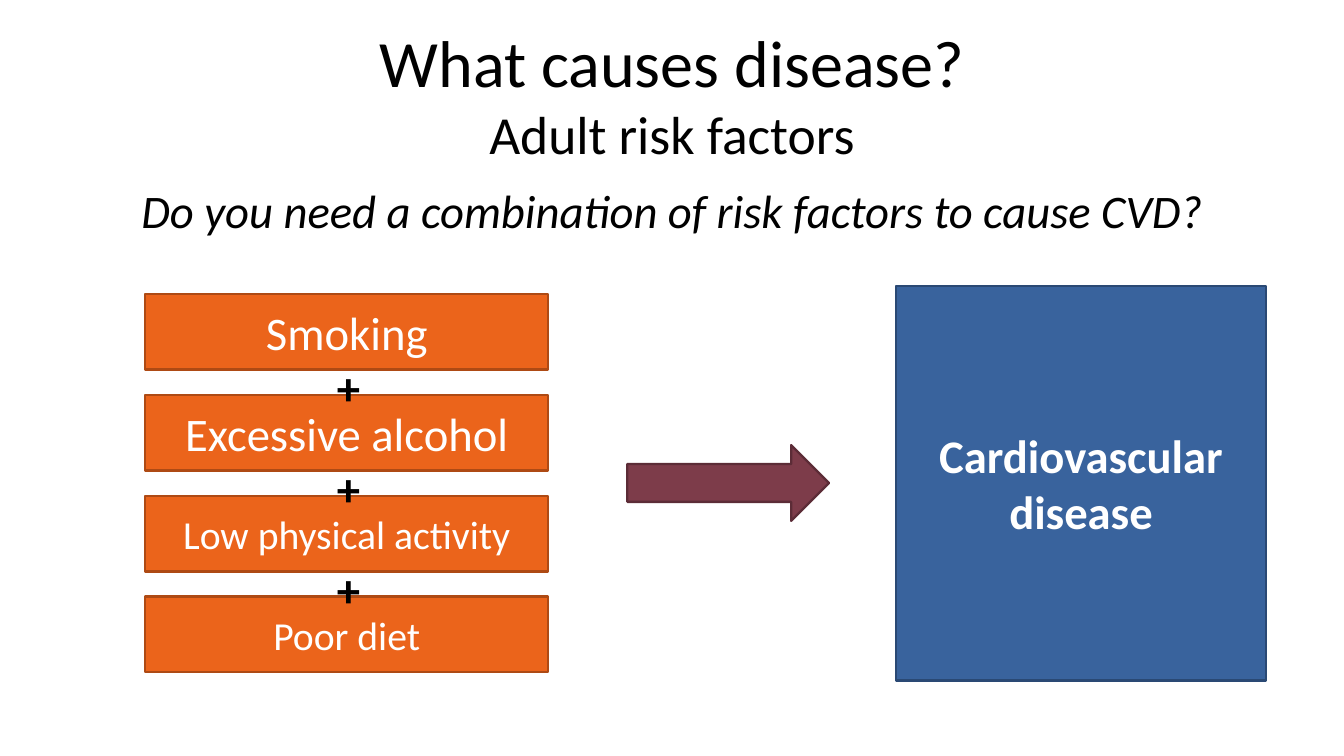
from pptx import Presentation
from pptx.dml.color import RGBColor
from pptx.enum import shapes, text
from pptx.util import Cm, Pt

COLOURS = {
    "text": "000000",
    "light": "FFFFFF",
    "factor": "EB641B",
    "factor_line": "AE4A14",
    "disease": "39639D",
    "disease_line": "2A4974",
    "arrow": "7D3C4A",
    "arrow_line": "5C2C37",
}
FACTORS = [
    ("Smoking", 40),
    ("Excessive alcohol", 40),
    ("Low physical activity", 34),
    ("Poor diet", 34),
]
FACTOR_TOP, FACTOR_STEP = 8.89, 3.05
PLUS_DROP = 1.78


def add_span(para, words, size, colour="text", bold=False, italic=False):
    span = para.add_run()
    span.text = words
    font = span.font
    font.name, font.size = "Calibri", Pt(size)
    font.bold, font.italic = bold, italic
    font.color.rgb = RGBColor.from_string(COLOURS[colour])


class SlideBuilder:
    def __init__(self, slide):
        self.slide = slide

    def frame(self, box, anchor, align=text.PP_ALIGN.CENTER):
        """Set margins and alignment of a box and return its first paragraph."""
        frame = box.text_frame
        frame.word_wrap = True
        frame.auto_size = text.MSO_AUTO_SIZE.NONE
        frame.vertical_anchor = anchor
        frame.margin_left = frame.margin_right = Cm(0.36)
        frame.margin_top = frame.margin_bottom = Cm(0.18)
        para = frame.paragraphs[0]
        para.alignment = align
        return para

    def title(self, heading, subheading, place):
        box = self.slide.shapes.title
        box.left, box.top, box.width, box.height = map(Cm, place)
        para = self.frame(box, text.MSO_ANCHOR.MIDDLE)
        add_span(para, heading, 56.7)
        para.add_line_break()
        add_span(para, subheading, 45.9)

    def label(self, words, place, align=text.PP_ALIGN.CENTER, before=0, **style):
        box = self.slide.shapes.add_textbox(*map(Cm, place))
        para = self.frame(box, text.MSO_ANCHOR.TOP, align)
        para.space_before = Pt(before)
        add_span(para, words, 40, **style)

    def block(self, kind, place, colour, words="", size=40, bold=False):
        box = self.slide.shapes.add_shape(kind, *map(Cm, place))
        box.shadow.inherit = False
        box.fill.solid()
        box.fill.fore_color.rgb = RGBColor.from_string(COLOURS[colour])
        box.line.color.rgb = RGBColor.from_string(COLOURS[colour + "_line"])
        box.line.width = Pt(2)
        if words:
            para = self.frame(box, text.MSO_ANCHOR.MIDDLE)
            add_span(para, words, size, "light", bold)


def main():
    deck = Presentation()
    deck.slide_width, deck.slide_height = Cm(40.64), Cm(22.86)
    builder = SlideBuilder(deck.slides.add_slide(deck.slide_layouts[5]))
    rectangle = shapes.MSO_SHAPE.RECTANGLE

    builder.title("What causes disease?", "Adult risk factors",
                  (2.03, 0.91, 36.58, 3.81))
    builder.label("Do you need a combination of risk factors to cause CVD?",
                  (2.03, 5.33, 36.58, 2.79), before=4, italic=True)
    builder.block(rectangle, (27.1, 8.64, 11.18, 11.94), "disease",
                  "Cardiovascular disease", bold=True)

    tops = [FACTOR_TOP + FACTOR_STEP * row for row in range(len(FACTORS))]
    for top, (factor, size) in zip(tops, FACTORS):
        builder.block(rectangle, (4.39, top, 12.19, 2.29), "factor", factor, size)
    for top in tops[:-1]:
        builder.label("+", (9.83, top + PLUS_DROP, 2.03, 2.08),
                      align=text.PP_ALIGN.LEFT, bold=True)

    builder.block(shapes.MSO_SHAPE.RIGHT_ARROW, (18.97, 13.46, 6.1, 2.29), "arrow")
    deck.save("out.pptx")


if __name__ == "__main__":
    main()
